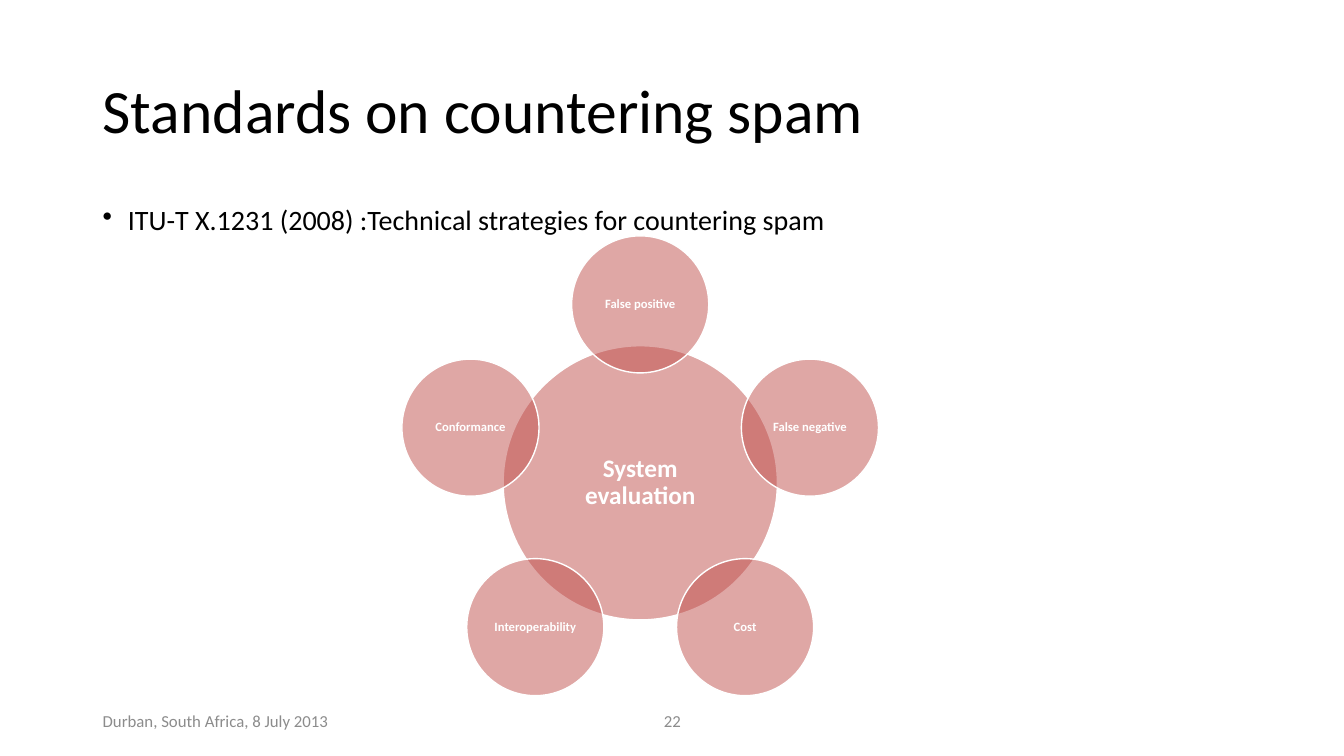
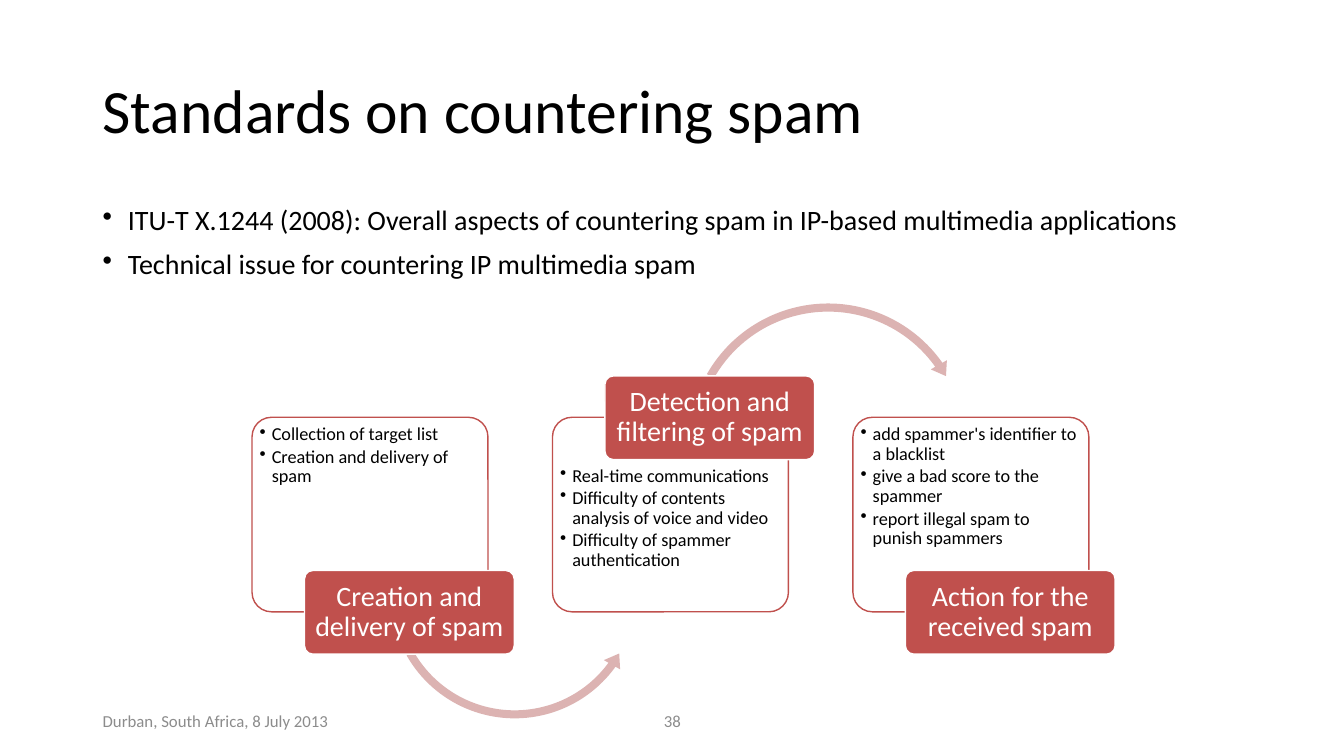
import math

from pptx import Presentation
from pptx import util as u
from pptx.dml.color import RGBColor
from pptx.enum import shapes, text
from pptx.oxml.ns import qn
from pptx.oxml.xmlchemy import OxmlElement

SHAPE = shapes.MSO_SHAPE
FONT = "Calibri"
BLACK, WHITE, GREY = "000000", "FFFFFF", "8C8C8C"
RED, PINK = "C0504D", "DCB3B2"
MARGIN, CONTENT_WIDTH = 0.92, 11.5
TITLE = "Standards on countering spam"
EVENT = "Durban, South Africa, 8 July 2013"
CENTER = text.PP_ALIGN.CENTER
MIDDLE = text.MSO_ANCHOR.MIDDLE


def color(value):
    return RGBColor.from_string(value)


def apply(target, values):
    for name, value in values.items():
        setattr(target, name, value)


def add_bullet(paragraph, indent):
    properties = paragraph._p.get_or_add_pPr()
    properties.set("marL", str(u.Inches(indent)))
    properties.set("indent", str(-u.Inches(indent)))
    bullet = OxmlElement("a:buChar")
    bullet.set("char", "•")
    properties.append(bullet)


class Deck:
    def __init__(self):
        self.presentation = Presentation()
        apply(self.presentation, {"slide_width": u.Inches(13.33),
                                  "slide_height": u.Inches(7.5)})
        self.slide = None

    def add_slide(self, number, bullets):
        layout = self.presentation.slide_layouts[6]
        self.slide = self.presentation.slides.add_slide(layout)
        self.text_box(MARGIN, 0.4, CONTENT_WIDTH, 1.45, [TITLE], size=44, anchor=MIDDLE)
        footer = {"size": 12, "ink": GREY, "anchor": MIDDLE, "spacing": 1}
        self.text_box(MARGIN, 6.95, 3, 0.4, [EVENT], **footer)
        self.text_box(4.42, 6.95, 4.5, 0.4, [number], align=CENTER, **footer)
        self.text_box(MARGIN, 2, CONTENT_WIDTH, 4.76, bullets, size=20, indent=0.25, gap=10)

    def fill_text(self, shape, lines, size, ink=BLACK, bold=False, align=text.PP_ALIGN.LEFT,
                  anchor=text.MSO_ANCHOR.TOP, insets=(0.1, 0.05, 0.1, 0.05),
                  spacing=0.9, indent=0, gap=0):
        """Insets run left, top, right, bottom; gap is the points between paragraphs."""
        frame = shape.text_frame
        sides = ("margin_left", "margin_top", "margin_right", "margin_bottom")
        apply(frame, dict(zip(sides, map(u.Inches, insets))))
        apply(frame, {"word_wrap": True, "vertical_anchor": anchor})
        for index, line in enumerate(lines):
            paragraph = frame.add_paragraph() if index else frame.paragraphs[0]
            if indent:
                add_bullet(paragraph, indent)
            apply(paragraph, {"alignment": align, "line_spacing": spacing,
                              "space_before": u.Pt(gap if index else 0)})
            run = paragraph.add_run()
            run.text = line
            apply(run.font, {"name": FONT, "size": u.Pt(size), "bold": bold})
            run.font.color.rgb = color(ink)

    def text_box(self, left, top, width, height, lines, **style):
        box = self.slide.shapes.add_textbox(*map(u.Inches, (left, top, width, height)))
        self.fill_text(box, lines, **style)

    def shape(self, kind, left, top, width, height, fill, line=None, opacity=100):
        shape = self.slide.shapes.add_shape(kind, *map(u.Inches, (left, top, width, height)))
        shape.shadow.inherit = False
        shape.fill.solid()
        shape.fill.fore_color.rgb = color(fill)
        if opacity < 100:
            alpha = OxmlElement("a:alpha")
            alpha.set("val", str(opacity * 1000))
            shape.element.spPr.find(".//" + qn("a:srgbClr")).append(alpha)
        if line:
            shape.line.color.rgb = color(line)
            shape.line.width = u.Pt(1)
        else:
            shape.line.fill.background()
        return shape

    def circle(self, center_x, center_y, diameter, label, size, inset):
        circle = self.shape(SHAPE.OVAL, center_x - diameter / 2, center_y - diameter / 2,
                            diameter, diameter, RED, WHITE, opacity=50)
        self.fill_text(circle, [label], size, WHITE, bold=True, align=CENTER,
                       anchor=MIDDLE, insets=(inset,) * 4)

    def rounded(self, left, top, width, height, fill, line, lines, opacity=100, **style):
        box = self.shape(SHAPE.ROUNDED_RECTANGLE, left, top, width, height,
                         fill, line, opacity)
        box.adjustments[0] = 0.1
        self.fill_text(box, lines, **style)

    def curved_arrow(self, kind, left, top, diameter, thickness, angles, head):
        """Thickness and head are percentages; angles are degrees: head, end, start."""
        arrow = self.shape(kind, left, top, diameter, diameter, PINK)
        values = [thickness / 100, *(angle * 0.6 for angle in angles), head / 100]
        for index, value in enumerate(values):
            arrow.adjustments[index] = value


def add_evaluation_slide(deck):
    deck.add_slide("22", ["ITU-T X.1231 (2008) :Technical strategies for countering spam"])
    hub_x, hub_y, orbit = 6.35, 4.79, 1.77
    deck.circle(hub_x, hub_y, 2.72, "System evaluation", 18, 0.03)
    criteria = ["False positive", "False negative", "Cost", "Interoperability", "Conformance"]
    for index, criterion in enumerate(criteria):
        angle = math.tau * index / len(criteria)
        deck.circle(hub_x + orbit * math.sin(angle), hub_y - orbit * math.cos(angle),
                    1.36, criterion, 9, 0.01)


def add_issues_slide(deck):
    deck.add_slide("38", [
        "ITU-T X.1244 (2008): Overall aspects of countering spam in IP-based "
        "multimedia applications",
        "Technical issue for countering IP multimedia spam"])
    below, above = 5.66, 3.73
    stages = [
        ("Creation and delivery of spam", below,
         ["Collection of target list", "Creation and delivery of spam"],
         (SHAPE.LEFT_CIRCULAR_ARROW, 3.82, 4.61, 2.57, 3.1, (6.37, 35.96, 150.41), 3.6)),
        ("Detection and filtering of spam", above,
         ["Real-time communications", "Difficulty of contents analysis of voice and video",
          "Difficulty of spammer authentication"],
         (SHAPE.CIRCULAR_ARROW, 6.78, 2.96, 2.87, 2.8, (5.66, 324.75, 209.59), 3.2)),
        ("Action for the received spam", below,
         ["add spammer's identifier to a blacklist", "give a bad score to the spammer",
          "report illegal spam to punish spammers"], None),
    ]
    for index, (label, label_top, points, arrow) in enumerate(stages):
        left = 2.5 + 2.98 * index
        top_inset = 0.43 if label_top == above else 0.02
        deck.rounded(left, 4.14, 2.34, 1.93, WHITE, RED, points, opacity=90, size=13,
                     indent=0.12, gap=2, insets=(0.02, top_inset, 0.02, 0.02))
        if arrow:
            deck.curved_arrow(*arrow)
        deck.rounded(left + 0.52, label_top, 2.08, 0.83, RED, WHITE, [label], size=20,
                     ink=WHITE, align=CENTER, anchor=MIDDLE,
                     insets=(0.04, 0.03, 0.04, 0.03))


def main():
    deck = Deck()
    add_evaluation_slide(deck)
    add_issues_slide(deck)
    deck.presentation.save("out.pptx")


if __name__ == "__main__":
    main()
